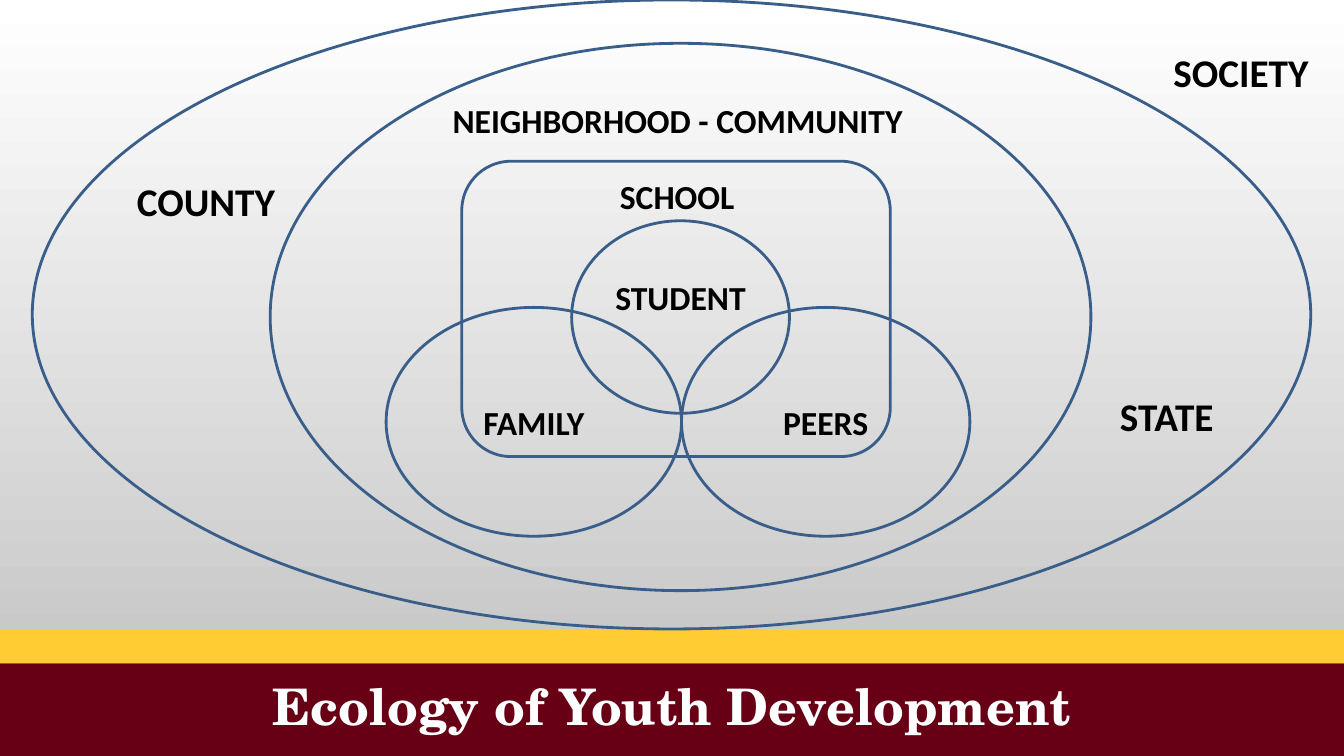
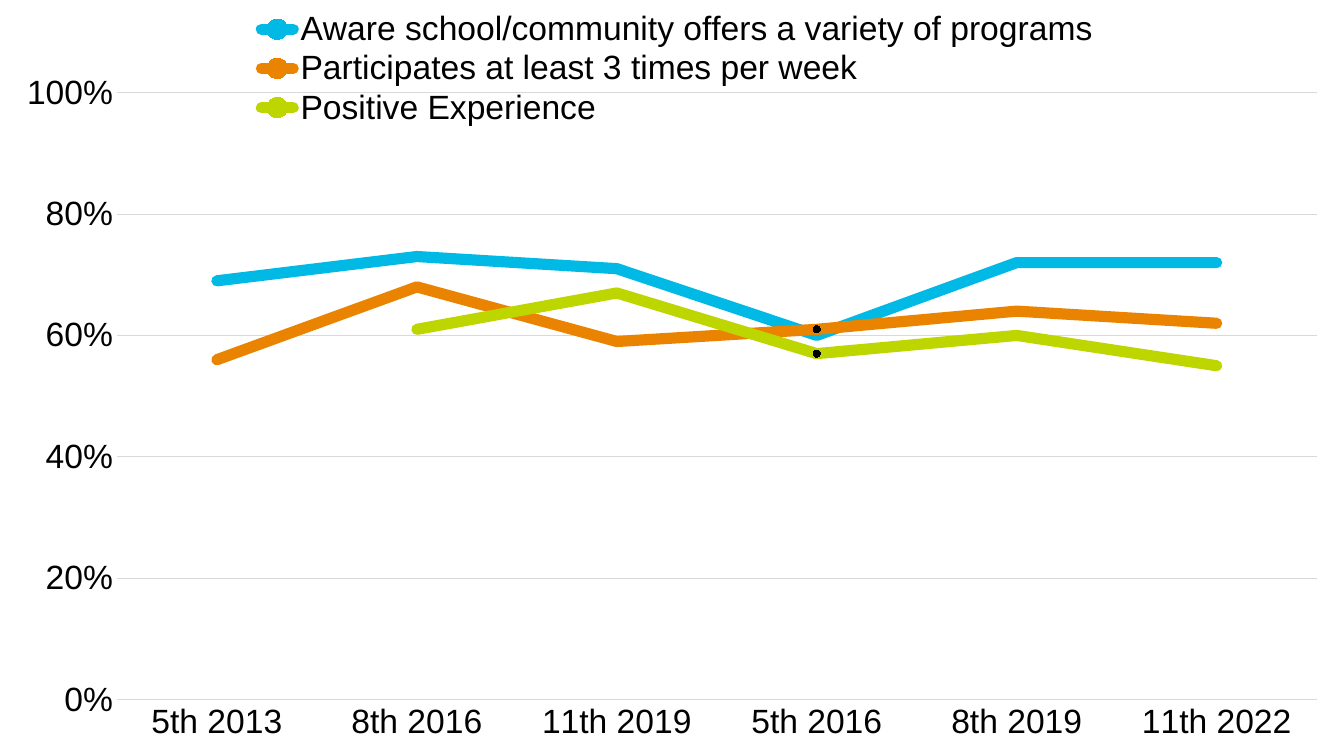
from dataclasses import dataclass

import pptx
import pptx.chart.data
import pptx.dml.color
import pptx.enum.chart
import pptx.enum.shapes
import pptx.enum.text
import pptx.oxml
import pptx.oxml.ns
import pptx.util
from pptx.util import Inches, Pt

RGB = pptx.dml.color.RGBColor.from_string
SHAPE = pptx.enum.shapes.MSO_SHAPE
ALIGN = pptx.enum.text.PP_ALIGN
ANCHOR = pptx.enum.text.MSO_ANCHOR
qn = pptx.oxml.ns.qn


@dataclass(frozen=True)
class Theme:
    maroon: str = "670015"
    gold: str = "FFCC33"
    white: str = "FFFFFF"
    grey: str = "BFBFBF"
    black: str = "000000"
    outline: str = "395E8A"
    grid: str = "D9D9D9"
    title_font: str = "TeX Gyre Schola"
    label_font: str = "Calibri"
    chart_font: str = "Arial"
    title_size: int = 36
    outer_size: int = 28
    inner_size: int = 24
    chart_size: int = 24


THEME = Theme()
WIDTH, HEIGHT = 13.33, 7.5
GOLD_TOP, MAROON_TOP = 6.25, 6.58


@dataclass(frozen=True)
class Zone:
    left: float
    top: float
    width: float
    height: float
    kind: int = SHAPE.OVAL
    text: str = ""
    bottom_inset: float = 0.05


@dataclass(frozen=True)
class Label:
    text: str
    left: float
    top: float
    width: float
    height: float
    size: int


@dataclass(frozen=True)
class Trend:
    name: str
    values: tuple
    colour: str
    dotted_points: tuple = ()


ZONES = [
    Zone(4.58, 1.6, 4.25, 2.93, SHAPE.ROUNDED_RECTANGLE),
    Zone(2.68, 0.43, 8.14, 5.43),
    Zone(6.76, 3.05, 2.86, 2.27, text="PEERS"),
    Zone(3.83, 3.05, 2.93, 2.27, text="FAMILY"),
    Zone(5.67, 2.19, 2.16, 1.91, text="STUDENT", bottom_inset=0.45),
    Zone(0.32, 0, 12.68, 6.24),
]
LABELS = [
    Label("SCHOOL", 6.05, 1.7, 1.34, 0.44, THEME.inner_size),
    Label("NEIGHBORHOOD - COMMUNITY", 4.39, 0.94, 4.9, 0.44, THEME.inner_size),
    Label("COUNTY", 1.26, 1.71, 1.58, 0.5, THEME.outer_size),
    Label("SOCIETY", 11.54, 0.43, 1.58, 0.5, THEME.outer_size),
    Label("STATE", 11.01, 3.84, 1.14, 0.5, THEME.outer_size),
]
COHORTS = ["5th 2013", "8th 2016", "11th 2019", "5th 2016", "8th 2019", "11th 2022"]
TRENDS = [
    Trend("Aware school/community offers a variety of programs",
          (0.69, 0.73, 0.71, 0.6, 0.72, 0.72), "00B9E4"),
    Trend("Participates at least 3 times per week",
          (0.56, 0.68, 0.59, 0.61, 0.64, 0.62), "E98300", (3,)),
    Trend("Positive Experience",
          (None, 0.61, 0.67, 0.57, 0.6, 0.55), "BED600", (3,)),
]


def set_font(font, name: str, size: int, colour: str, bold: bool) -> None:
    font.name, font.size, font.bold = name, Pt(size), bold
    font.color.rgb = RGB(colour)


# Shared background and bands
def style_master(prs, slide) -> None:
    """Give the master its gradient and bands; bands are drawn on a slide, then moved."""
    master = prs.slide_master
    backdrop = master.background.fill
    backdrop.gradient()
    backdrop.gradient_angle = 270
    for stop, position, colour in zip(backdrop.gradient_stops, (0, 1), (THEME.white, THEME.grey)):
        stop.position = position
        stop.color.rgb = RGB(colour)
    first_placeholder = master.shapes[0].element
    for top, bottom, colour in ((MAROON_TOP, HEIGHT, THEME.maroon),
                                (GOLD_TOP, MAROON_TOP, THEME.gold)):
        band = slide.shapes.add_shape(SHAPE.RECTANGLE, 0, Inches(top),
                                      Inches(WIDTH), Inches(bottom - top))
        band.shadow.inherit = False
        band.fill.solid()
        band.fill.fore_color.rgb = RGB(colour)
        band.line.fill.background()
        first_placeholder.addprevious(band.element)


def set_title(slide, text: str) -> None:
    title = slide.shapes.title
    title.left, title.top = Inches(0), Inches(MAROON_TOP)
    title.width, title.height = Inches(WIDTH), Inches(HEIGHT - MAROON_TOP)
    title.text_frame.text = text
    title.text_frame.vertical_anchor = ANCHOR.MIDDLE
    paragraph = title.text_frame.paragraphs[0]
    paragraph.alignment = ALIGN.CENTER
    paragraph.line_spacing = 0.9
    set_font(paragraph.font, THEME.title_font, THEME.title_size, THEME.white, True)


# Ecology diagram
def draw_zone(slide, zone: Zone) -> None:
    outline = slide.shapes.add_shape(zone.kind, Inches(zone.left), Inches(zone.top),
                                     Inches(zone.width), Inches(zone.height))
    outline.shadow.inherit = False
    outline.fill.background()
    outline.line.color.rgb = RGB(THEME.outline)
    outline.line.width = Pt(2)
    if zone.text:
        frame = outline.text_frame
        frame.text = zone.text
        frame.word_wrap = False
        frame.vertical_anchor = ANCHOR.MIDDLE
        frame.margin_bottom = Inches(zone.bottom_inset)
        paragraph = frame.paragraphs[0]
        paragraph.alignment = ALIGN.CENTER
        set_font(paragraph.font, THEME.label_font, THEME.inner_size, THEME.black, True)


def draw_label(slide, label: Label) -> None:
    caption = slide.shapes.add_textbox(Inches(label.left), Inches(label.top),
                                       Inches(label.width), Inches(label.height))
    frame = caption.text_frame
    frame.word_wrap = True
    frame.text = label.text
    set_font(frame.paragraphs[0].font, THEME.label_font, label.size, THEME.black, True)


# Trend chart
def manual_layout(left: float, top: float, width: float, height: float, inner: bool = False):
    """Build a chart layout from inches on a chart that fills the slide."""
    target = '<c:layoutTarget val="inner"/>' if inner else ""
    fractions = (("x", left / WIDTH), ("y", top / HEIGHT),
                 ("w", width / WIDTH), ("h", height / HEIGHT))
    sizes = "".join(f'<c:{key} val="{value:.4f}"/>' for key, value in fractions)
    return pptx.oxml.parse_xml(
        f'<c:layout {pptx.oxml.ns.nsdecls("c")}><c:manualLayout>{target}'
        f'<c:xMode val="edge"/><c:yMode val="edge"/>{sizes}</c:manualLayout></c:layout>')


def style_marker(marker, colour: str) -> None:
    marker.style = pptx.enum.chart.XL_MARKER_STYLE.CIRCLE
    marker.size = 5
    marker.format.fill.solid()
    marker.format.fill.fore_color.rgb = RGB(colour)
    marker.format.line.color.rgb = RGB(colour)


def style_line(line, colour: str) -> None:
    line.color.rgb = RGB(colour)
    line.width = Pt(8)


def style_axes(chart) -> None:
    tick = pptx.enum.chart.XL_TICK_MARK.NONE
    for axis in (chart.category_axis, chart.value_axis):
        axis.major_tick_mark = axis.minor_tick_mark = tick
    percent = chart.value_axis
    percent.minimum_scale, percent.maximum_scale, percent.major_unit = 0, 1, 0.2
    percent.tick_labels.number_format = "0%"
    percent.tick_labels.number_format_is_linked = False
    percent.format.line.fill.background()
    for line in (chart.category_axis.format.line, percent.major_gridlines.format.line):
        line.color.rgb = RGB(THEME.grid)
        line.width = Pt(0.75)


def draw_trends(slide) -> None:
    data = pptx.chart.data.CategoryChartData(number_format="0%")
    data.categories = COHORTS
    for trend in TRENDS:
        data.add_series(trend.name, trend.values)
    chart = slide.shapes.add_chart(pptx.enum.chart.XL_CHART_TYPE.LINE_MARKERS, 0, 0,
                                   Inches(WIDTH), Inches(HEIGHT), data).chart
    chart.has_title = False
    set_font(chart.font, THEME.chart_font, THEME.chart_size, THEME.black, False)
    style_axes(chart)

    plot = chart.plots[0]
    plot.vary_by_categories = False
    for series, trend in zip(plot.series, TRENDS):
        series.smooth = False
        style_line(series.format.line, trend.colour)
        series.format.line._get_or_add_ln().set("cap", "rnd")
        style_marker(series.marker, trend.colour)
        for index in trend.dotted_points:
            point = series.points[index]
            style_line(point.format.line, THEME.black)
            style_marker(point.marker, THEME.black)

    # Legend over the top of the plot
    chart.has_legend = True
    legend = chart.legend
    legend.position = pptx.enum.chart.XL_LEGEND_POSITION.TOP
    legend.include_in_layout = True
    chart_space = chart.element
    for old in chart_space.findall(".//" + qn("c:plotArea") + "/" + qn("c:layout")):
        old.getparent().remove(old)
    plot_area = chart_space.find(".//" + qn("c:plotArea"))
    plot_area.insert(0, manual_layout(1.16, 0.92, 11.9, 6.02, inner=True))
    legend_element = chart_space.find(".//" + qn("c:legend"))
    for old in legend_element.findall(qn("c:layout")):
        legend_element.remove(old)
    legend_element.find(qn("c:legendPos")).addnext(manual_layout(2.45, 0.09, 8.53, 1.18))

    # White chart background
    chart_space.find(qn("c:chart")).addnext(pptx.oxml.parse_xml(
        f'<c:spPr {pptx.oxml.ns.nsdecls("c", "a")}><a:solidFill>'
        f'<a:srgbClr val="{THEME.white}"/></a:solidFill><a:ln><a:noFill/></a:ln></c:spPr>'))


def main() -> None:
    prs = pptx.Presentation()
    prs.slide_width, prs.slide_height = Inches(WIDTH), Inches(HEIGHT)

    # Slide 1: ecology of youth development
    ecology = prs.slides.add_slide(prs.slide_layouts[5])
    style_master(prs, ecology)
    set_title(ecology, "Ecology of Youth Development")
    for zone in ZONES:
        draw_zone(ecology, zone)
    for label in LABELS:
        draw_label(ecology, label)

    # Slide 2: participation trends
    draw_trends(prs.slides.add_slide(prs.slide_layouts[6]))
    prs.save("out.pptx")


if __name__ == "__main__":
    main()
